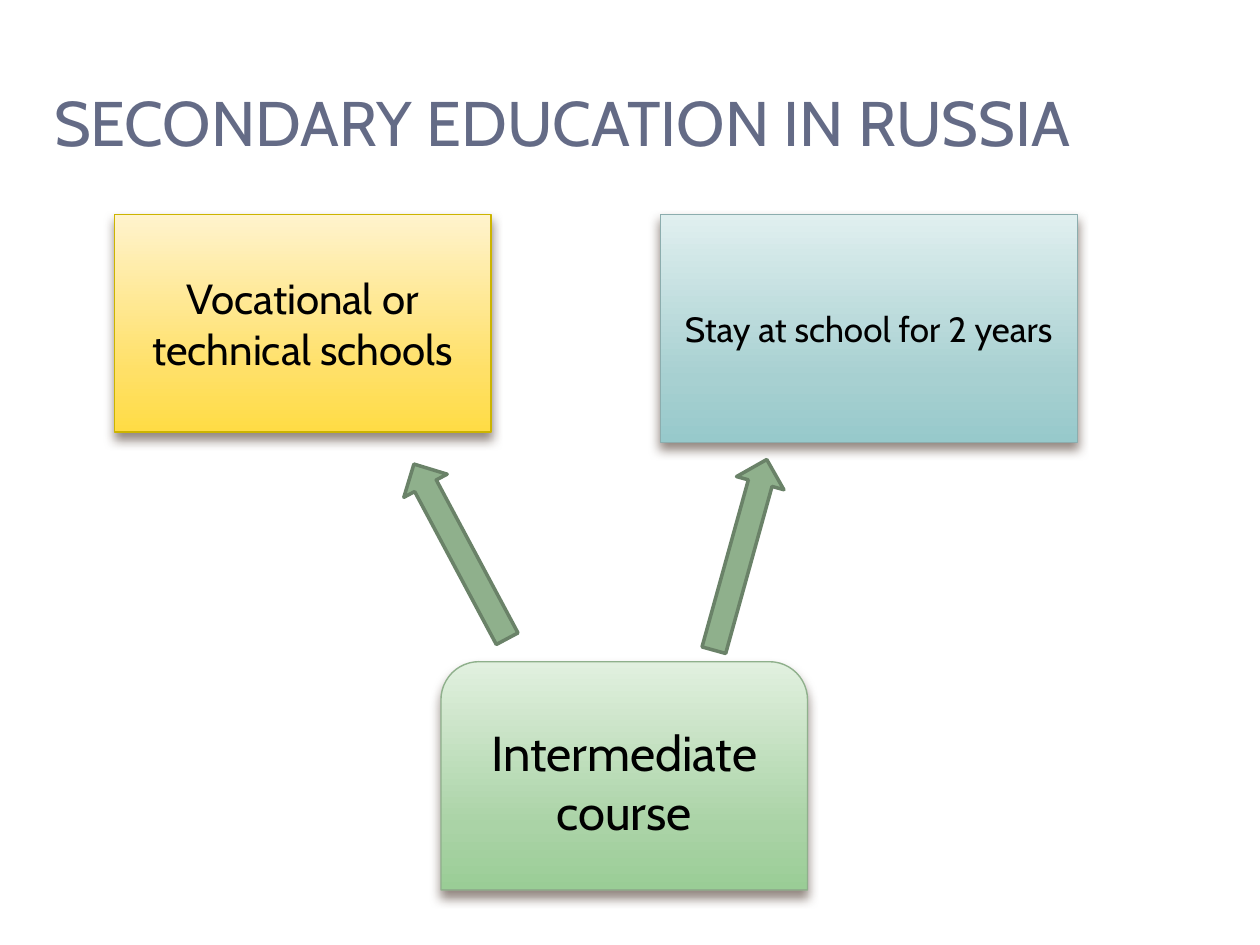
from lxml import etree
from pptx import Presentation
from pptx.dml.color import RGBColor
from pptx.enum.shapes import MSO_SHAPE
from pptx.enum.text import MSO_ANCHOR, PP_ALIGN
from pptx.oxml.ns import qn
from pptx.util import Cm, Pt

RECTANGLE = MSO_SHAPE.RECTANGLE
ROUND_TOP = MSO_SHAPE.ROUND_2_SAME_RECTANGLE
RIGHT_ARROW = MSO_SHAPE.RIGHT_ARROW
MIDDLE = MSO_ANCHOR.MIDDLE
LEFT, CENTER = PP_ALIGN.LEFT, PP_ALIGN.CENTER

THEME = {
    "font": "Cabin",
    "title": ("646B86", 36),
    "text": "000000",
    "shadow": "4E3B30",
    "arrow": ("8FB08C", "6A8268"),
    # Gradient from top to bottom, then outline
    "green": (("E1F0DF", "AAD3A6", "9ACD96"), "8FB08C"),
    "yellow": (("FFF3CD", "FFE067", "FFDC45"), "CCB400"),
    "teal": (("E0EFEF", "A7D0D1", "97C9CB"), "8CADAE"),
    "sizes": {"course": 28, "vocational": 24, "school": 20},
}
GRADIENT_POSITIONS = (0, 72, 100)


def write_text(shape, text, size, color, alignment):
    frame = shape.text_frame
    frame.text = text
    frame.word_wrap = True
    frame.vertical_anchor = MIDDLE
    paragraph = frame.paragraphs[0]
    paragraph.alignment = alignment
    font = paragraph.runs[0].font
    font.name = THEME["font"]
    font.size = Pt(size)
    font.color.rgb = RGBColor.from_string(color)


def add_color(parent, color):
    return etree.SubElement(parent, qn("a:srgbClr"), val=color)


presentation = Presentation()
presentation.slide_width = Cm(25.4)
presentation.slide_height = Cm(19.05)
slide = presentation.slides.add_slide(presentation.slide_layouts[6])

# Boxes: kind, left, top, width, height, palette, size, text
boxes = [
    (ROUND_TOP, 8.89, 13.34, 7.39, 4.6, "green", "course", "Intermediate course"),
    (RECTANGLE, 2.31, 4.32, 7.59, 4.39, "yellow", "vocational",
     "Vocational or technical schools"),
    (RECTANGLE, 13.31, 4.32, 8.41, 4.6, "teal", "school",
     "Stay at school for 2 years"),
]
for kind, left, top, width, height, palette, size, text in boxes:
    shape = slide.shapes.add_shape(kind, Cm(left), Cm(top), Cm(width), Cm(height))
    colors, outline = THEME[palette]
    shape.line.color.rgb = RGBColor.from_string(outline)
    shape.line.width = Pt(0.79)
    write_text(shape, text, THEME["sizes"][size], THEME["text"], CENTER)

    # Three-stop vertical gradient
    shape.fill.gradient()
    shape.fill.gradient_angle = 270
    stops = shape._element.spPr.find(".//" + qn("a:gsLst"))
    for stop in list(stops):
        stops.remove(stop)
    for position, color in zip(GRADIENT_POSITIONS, colors):
        add_color(etree.SubElement(stops, qn("a:gs"), pos=str(position * 1000)), color)

    # Soft shadow below the box
    shape.shadow.inherit = False
    effects = shape._element.spPr.find(qn("a:effectLst"))
    shadow = etree.SubElement(
        effects, qn("a:outerShdw"), blurRad=str(Pt(6)), dist=str(Pt(4)),
        dir="5400000", rotWithShape="0")
    etree.SubElement(add_color(shadow, THEME["shadow"]), qn("a:alpha"), val="60000")

# Arrows from the course to both choices: left, top, rotation
arrow_fill, arrow_line = THEME["arrow"]
for left, top, rotation in [(7.29, 10.62, 241.9), (12.93, 10.69, 285.5)]:
    arrow = slide.shapes.add_shape(RIGHT_ARROW, Cm(left), Cm(top), Cm(3.99), Cm(0.99))
    arrow.rotation = rotation
    arrow.shadow.inherit = False
    arrow.fill.solid()
    arrow.fill.fore_color.rgb = RGBColor.from_string(arrow_fill)
    arrow.line.color.rgb = RGBColor.from_string(arrow_line)
    arrow.line.width = Pt(2)

# Title
title = slide.shapes.add_textbox(Cm(0.84), Cm(1.27), Cm(24.13), Cm(2.34))
title_color, title_size = THEME["title"]
write_text(title, "SECONDARY EDUCATION IN RUSSIA", title_size, title_color, LEFT)

presentation.save("out.pptx")
